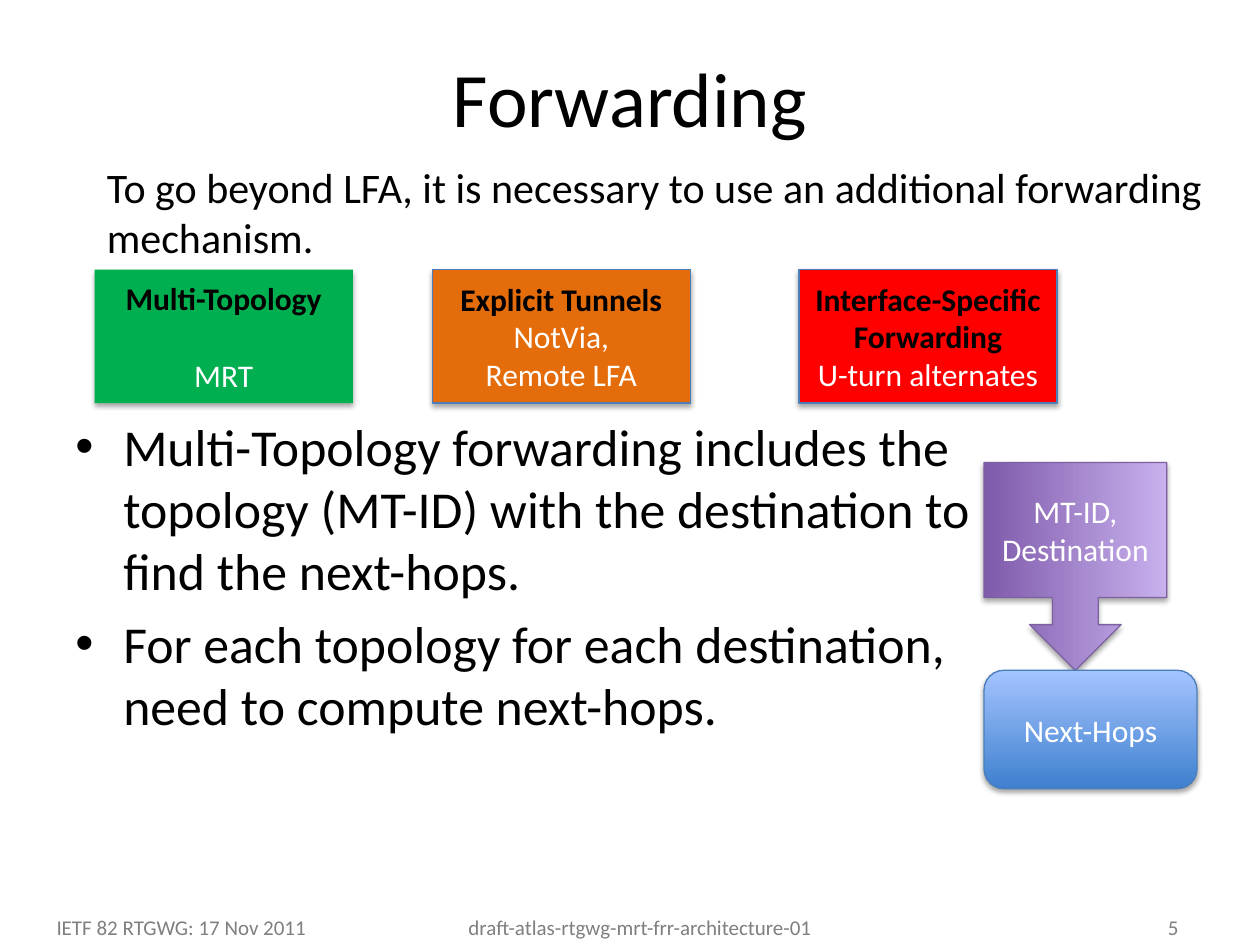
from dataclasses import dataclass

from lxml.etree import SubElement
from pptx import Presentation
from pptx.dml.color import RGBColor
from pptx.enum.shapes import MSO_SHAPE as Preset
from pptx.enum.text import MSO_ANCHOR as Anchor, MSO_AUTO_SIZE as AutoSize, PP_ALIGN as Align
from pptx.oxml.ns import qn
from pptx.util import Inches, Pt


@dataclass(frozen=True)
class Theme:
    font: str = "Calibri"
    ink: str = "000000"
    paper: str = "FFFFFF"
    muted: str = "7F7F7F"
    green: str = "00B050"
    orange: str = "E46C0A"
    red: str = "FF0000"
    blue_line: str = "4B7EBC"
    purple_line: str = "7D60A0"
    blues: tuple = ("3F80CE", "A4C4FF")
    purples: tuple = ("7F5BAB", "C8B0ED")
    title: float = 44
    body: float = 29.6
    intro: float = 24
    label: float = 18
    footer: float = 12


THEME = Theme()


def write(frame, text, size=THEME.label, color=THEME.ink, bold=False,
          align=Align.LEFT, before=0, bullet=False):
    paragraph = frame.paragraphs[0]
    if paragraph.runs:
        paragraph = frame.add_paragraph()
    paragraph.alignment = align
    paragraph.space_before = Pt(before)
    if bullet:
        props = paragraph._p.get_or_add_pPr()
        props.set("marL", str(Inches(0.38)))
        props.set("indent", str(Inches(-0.38)))
        SubElement(props, qn("a:buFont"), typeface="Arial")
        SubElement(props, qn("a:buChar"), char="•")
    run = paragraph.add_run()
    run.text = text
    run.font.name = THEME.font
    run.font.size = Pt(size)
    run.font.bold = bold
    run.font.color.rgb = RGBColor.from_string(color)


def add_text_frame(slide, box, wrap=True):
    frame = slide.shapes.add_textbox(*map(Inches, box)).text_frame
    frame.word_wrap = wrap
    frame.auto_size = AutoSize.NONE if wrap else AutoSize.SHAPE_TO_FIT_TEXT
    return frame


def add_shadow(shape):
    effects = SubElement(shape._element.spPr, qn("a:effectLst"))
    shadow = SubElement(effects, qn("a:outerShdw"), blurRad=str(Pt(3.1)), dist=str(Pt(1.8)),
                        dir="5400000", rotWithShape="0")
    color = SubElement(shadow, qn("a:srgbClr"), val="000000")
    SubElement(color, qn("a:alpha"), val="35000")


def add_block(slide, preset, box, fill, line=None):
    block = slide.shapes.add_shape(preset, *map(Inches, box))
    if isinstance(fill, tuple):
        block.fill.gradient()
        block.fill.gradient_angle = 90
        for stop, color in zip(block.fill.gradient_stops, fill):
            stop.color.rgb = RGBColor.from_string(color)
    else:
        block.fill.solid()
        block.fill.fore_color.rgb = RGBColor.from_string(fill)
    if line:
        block.line.color.rgb = RGBColor.from_string(line)
        block.line.width = Pt(0.75)
    else:
        block.line.fill.background()
    add_shadow(block)
    block.text_frame.word_wrap = True
    block.text_frame.vertical_anchor = Anchor.MIDDLE
    return block


def place_title(slide, box):
    title = slide.shapes.title
    title.left, title.top, title.width, title.height = map(Inches, box)
    title.text_frame.vertical_anchor = Anchor.MIDDLE
    write(title.text_frame, "Forwarding", size=THEME.title, align=Align.CENTER)


def place_intro(slide, box):
    write(add_text_frame(slide, box),
          "To go beyond LFA, it is necessary to use an additional forwarding mechanism.",
          size=THEME.intro)


def place_mechanisms(slide, box):
    left, top, _, height = box
    mechanisms = [
        (0, THEME.green, None, "Multi-Topology", ["MRT"], 22),
        (2.68, THEME.orange, THEME.blue_line, "Explicit Tunnels", ["NotVia,", "Remote LFA"], 0),
        (5.59, THEME.red, THEME.blue_line, "Interface-Specific Forwarding",
         ["U-turn alternates"], 0),
    ]
    for offset, fill, line, heading, examples, gap in mechanisms:
        block = add_block(slide, Preset.RECTANGLE, (left + offset, top, 2.05, height), fill, line)
        write(block.text_frame, heading, bold=True, align=Align.CENTER)
        for example in examples:
            write(block.text_frame, example, color=THEME.paper, align=Align.CENTER, before=gap)


def place_points(slide, box):
    frame = add_text_frame(slide, box)
    points = [
        "Multi-Topology forwarding includes the topology (MT-ID) with the destination "
        "to find the next-hops.",
        "For each topology for each destination, need to compute next-hops.",
    ]
    for index, point in enumerate(points):
        write(frame, point, size=THEME.body, bullet=True, before=6 if index else 0)


def place_lookup(slide, box):
    left, top, width, height = box
    key_width, key_height, hops_height = 1.45, 1.65, 0.94
    shift = (key_height - key_width) / 2
    key = add_block(slide, Preset.RIGHT_ARROW_CALLOUT,
                    (left - shift, top + shift, key_height, key_width),
                    THEME.purples, THEME.purple_line)
    key.rotation = 90
    key.text_frame._txBody.bodyPr.set("vert", "vert270")
    for part in ("MT-ID,", "Destination"):
        write(key.text_frame, part, color=THEME.paper, align=Align.CENTER)
    hops = add_block(slide, Preset.ROUNDED_RECTANGLE,
                     (left, top + height - hops_height, width, hops_height),
                     THEME.blues, THEME.blue_line)
    write(hops.text_frame, "Next-Hops", color=THEME.paper, align=Align.CENTER)


def place_footer(slide, box):
    left, top, _, height = box
    notes = [
        (0, 2.21, "IETF 82 RTGWG: 17 Nov 2011"),
        (3.27, 2.96, "draft-atlas-rtgwg-mrt-frr-architecture-01"),
        (8.82, 0.4, "5"),
    ]
    for offset, width, note in notes:
        frame = add_text_frame(slide, (left + offset, top, width, height), wrap=False)
        write(frame, note, size=THEME.footer, color=THEME.muted)


def main():
    deck = Presentation()
    deck.slide_width, deck.slide_height = Inches(10), Inches(7.5)
    slide = deck.slides.add_slide(deck.slide_layouts.get_by_name("Title Only"))
    place_footer(slide, (0.35, 7.21, 9.22, 0.3))
    place_points(slide, (0.5, 3.24, 7.31, 3.03))
    place_title(slide, (0.5, 0.3, 9, 0.93))
    place_mechanisms(slide, (0.75, 2.14, 7.64, 1.06))
    place_intro(slide, (0.75, 1.23, 8.96, 0.91))
    place_lookup(slide, (7.81, 3.67, 1.69, 2.59))
    deck.save("out.pptx")


if __name__ == "__main__":
    main()
